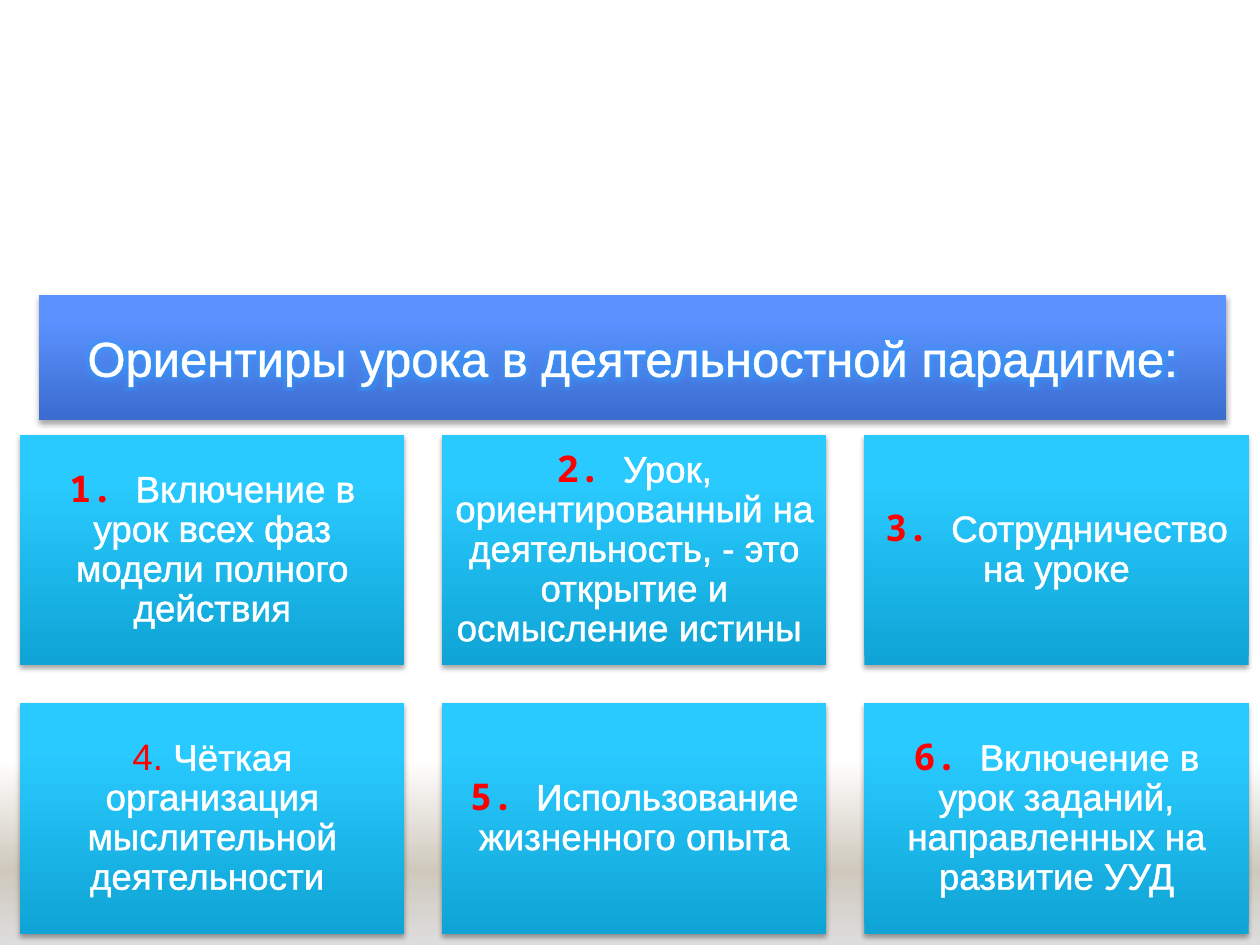
from lxml import etree
from pptx import Presentation
from pptx import util as u
from pptx.dml.color import RGBColor
from pptx.enum import shapes, text
from pptx.oxml import ns

THEME = {
    "font": "Arial",
    "number_font": "Noto Sans Mono",
    "title_size": 28,
    "card_size": 21,
    "text": "FFFFFF",
    "number": "FF0000",
    "glow": "29A0FF",
    "title_fill": [(0, "3B6CCF"), (80, "5B92FF"), (100, "5D93FF")],
    "card_fill": [(0, "0FA4D5"), (80, "29CAFF"), (100, "2BCAFF")],
    "floor_fill": [(0, "FFFFFF"), (60, "CFC9BD"), (100, "DDDDDD")],
}
TITLE = "Ориентиры урока в деятельностной парадигме:"
CARDS = [
    ("1. ", "Включение в урок всех фаз модели полного действия"),
    ("2. ", "Урок, ориентированный на деятельность, - это открытие и осмысление истины "),
    ("3. ", "Сотрудничество на уроке"),
    ("4. ", "Чёткая организация мыслительной деятельности "),
    ("5. ", "Использование жизненного опыта"),
    ("6. ", "Включение в урок заданий, направленных на развитие УУД"),
]
COLUMNS = 3
CARD_LEFT, CARD_TOP = 0.16, 3.45
CARD_WIDTH, CARD_HEIGHT, GAP = 3.05, 1.83, 0.3


def paint(shape, stops, angle, shadow=True):
    """Give the shape a linear gradient, no outline and an optional soft shadow below."""
    shape.line.fill.background()
    colours = "".join(
        f'<a:gs pos="{position * 1000}"><a:srgbClr val="{colour}"/></a:gs>'
        for position, colour in stops)
    gradient = etree.fromstring(
        f'<a:gradFill {ns.nsdecls("a")} rotWithShape="1"><a:gsLst>{colours}</a:gsLst>'
        f'<a:lin ang="{angle * 60000}" scaled="0"/></a:gradFill>')
    properties = shape.element.spPr
    properties.find(ns.qn("a:ln")).addprevious(gradient)
    shape.shadow.inherit = False
    if shadow:
        properties.find(ns.qn("a:effectLst")).append(etree.fromstring(
            f'<a:outerShdw {ns.nsdecls("a")} blurRad="39370" dist="22860" dir="5400000" '
            'rotWithShape="0"><a:srgbClr val="000000"><a:alpha val="35000"/></a:srgbClr>'
            '</a:outerShdw>'))


def add_run(paragraph, words, size, colour, font=THEME["font"], bold=False, outlined=True):
    run = paragraph.add_run()
    run.text = words
    formats = {"size": u.Pt(size), "bold": bold, "name": font}
    for name, value in formats.items():
        setattr(run.font, name, value)
    run.font.color.rgb = RGBColor.from_string(colour)
    if outlined:
        run.font.fill._xPr.insert(0, etree.fromstring(
            f'<a:ln {ns.nsdecls("a")} w="18415"><a:solidFill><a:srgbClr val="{colour}"/>'
            '</a:solidFill></a:ln>'))
    return run


presentation = Presentation()
presentation.slide_width, presentation.slide_height = u.Inches(10), u.Inches(7.5)
slide = presentation.slides.add_slide(presentation.slide_layouts[5])

floor = slide.shapes.add_shape(
    shapes.MSO_SHAPE.RECTANGLE, 0, u.Inches(6.03), presentation.slide_width, u.Inches(1.47))
paint(floor, THEME["floor_fill"], 90, shadow=False)

title = slide.shapes.title
box = {"left": 0.31, "top": 2.34, "width": 9.42, "height": 0.99}
for name, value in box.items():
    setattr(title, name, u.Inches(value))
paint(title, THEME["title_fill"], 270)
frame = title.text_frame
frame.word_wrap = True
frame.auto_size = text.MSO_AUTO_SIZE.NONE
frame.vertical_anchor = text.MSO_ANCHOR.MIDDLE
frame.paragraphs[0].alignment = text.PP_ALIGN.CENTER
heading = add_run(frame.paragraphs[0], TITLE, THEME["title_size"], THEME["text"])
heading.font.fill._xPr.find(ns.qn("a:solidFill")).addnext(etree.fromstring(
    f'<a:effectLst {ns.nsdecls("a")}><a:glow rad="63500"><a:srgbClr val="{THEME["glow"]}">'
    '<a:alpha val="45000"/></a:srgbClr></a:glow></a:effectLst>'))

for index, (number, words) in enumerate(CARDS):
    row, column = divmod(index, COLUMNS)
    card = slide.shapes.add_shape(
        shapes.MSO_SHAPE.RECTANGLE,
        u.Inches(CARD_LEFT + column * (CARD_WIDTH + GAP)),
        u.Inches(CARD_TOP + row * (CARD_HEIGHT + GAP)),
        u.Inches(CARD_WIDTH), u.Inches(CARD_HEIGHT))
    paint(card, THEME["card_fill"], 270)
    frame = card.text_frame
    frame.word_wrap = True
    frame.vertical_anchor = text.MSO_ANCHOR.MIDDLE
    for side in ("left", "top", "right", "bottom"):
        setattr(frame, f"margin_{side}", u.Inches(0.09))
    paragraph = frame.paragraphs[0]
    paragraph.alignment = text.PP_ALIGN.CENTER
    paragraph.line_spacing = 0.9
    plain = number == "4. "
    add_run(paragraph, number, THEME["card_size"], THEME["number"],
            font=THEME["font" if plain else "number_font"], bold=not plain, outlined=False)
    add_run(paragraph, words, THEME["card_size"], THEME["text"])

presentation.save("out.pptx")
